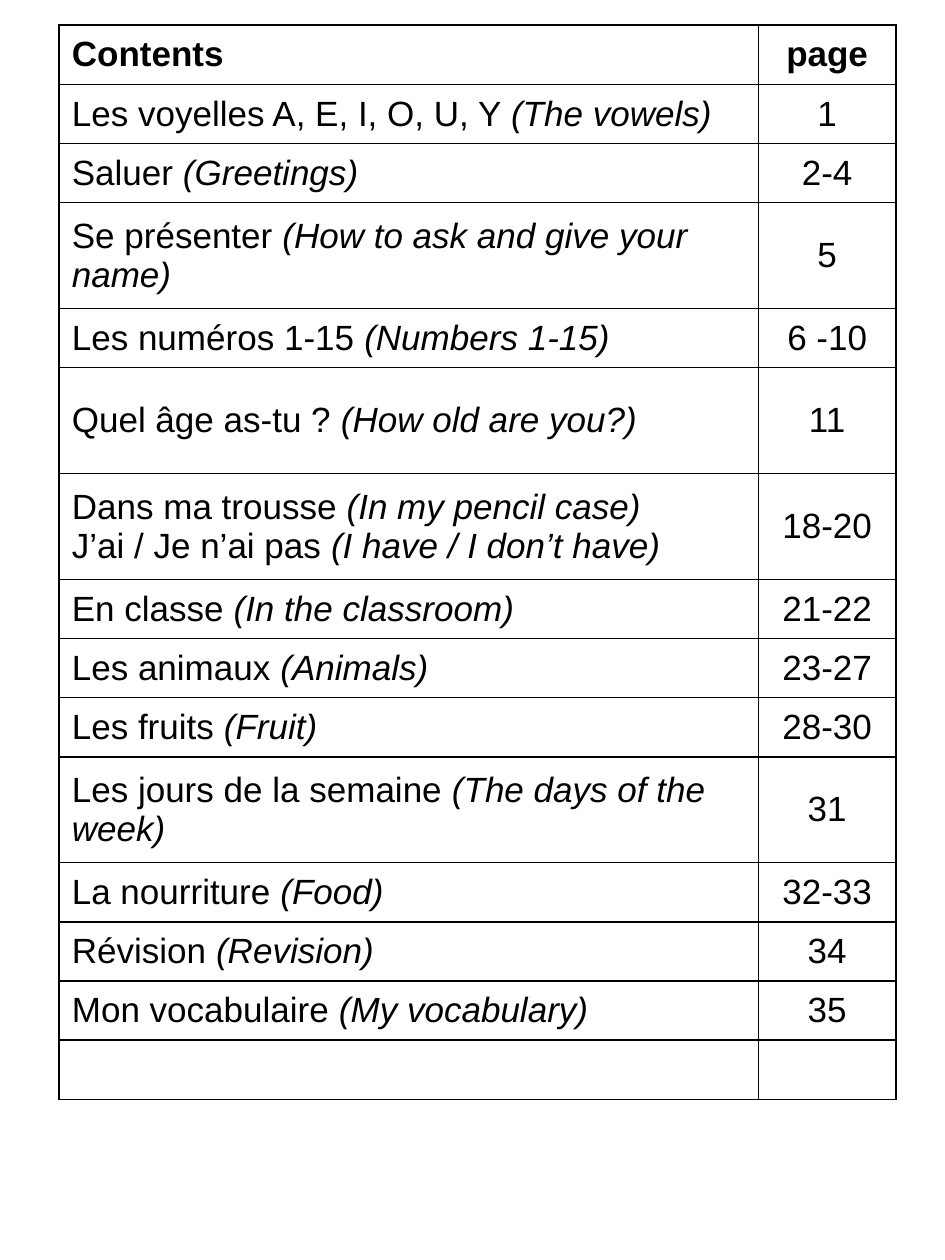
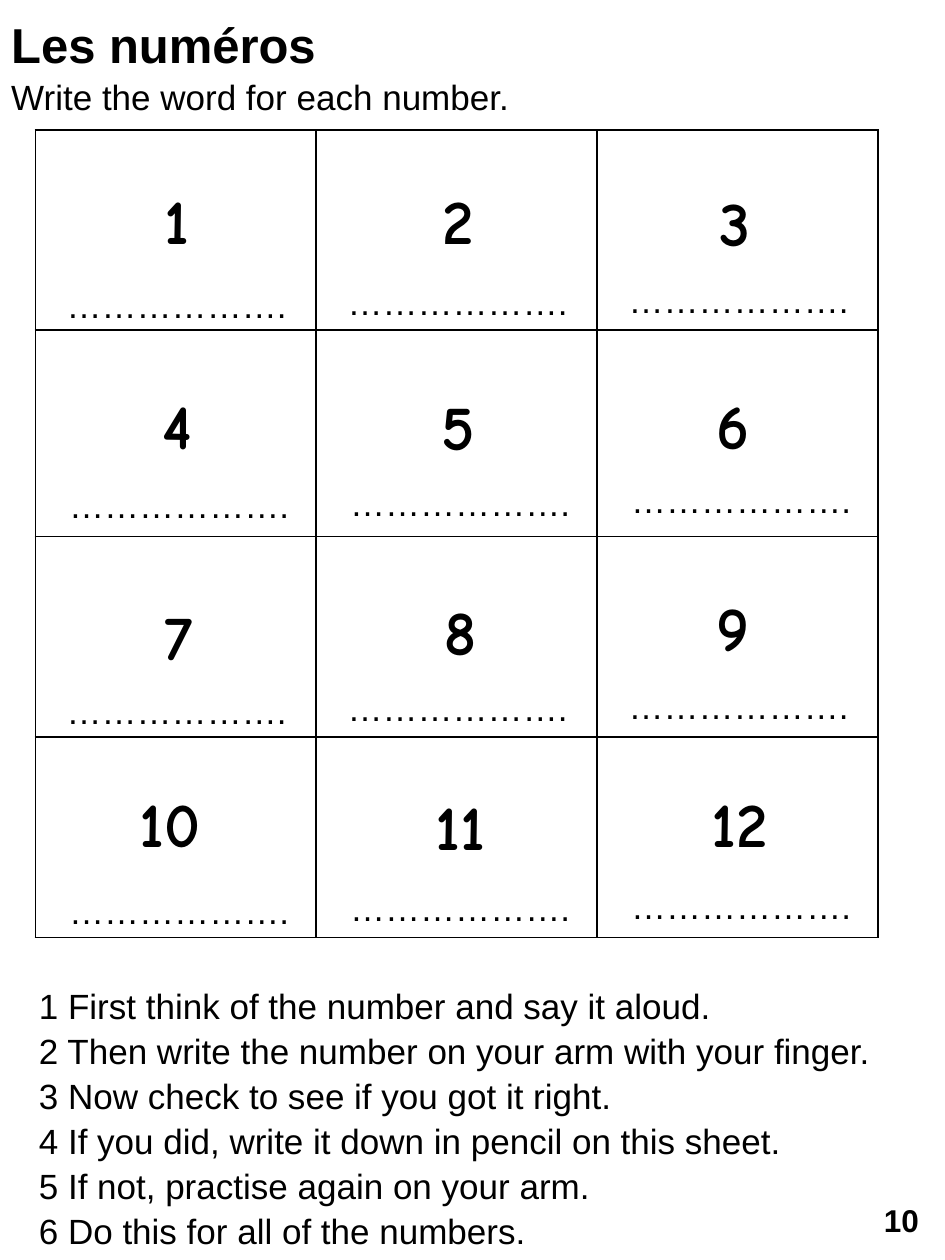
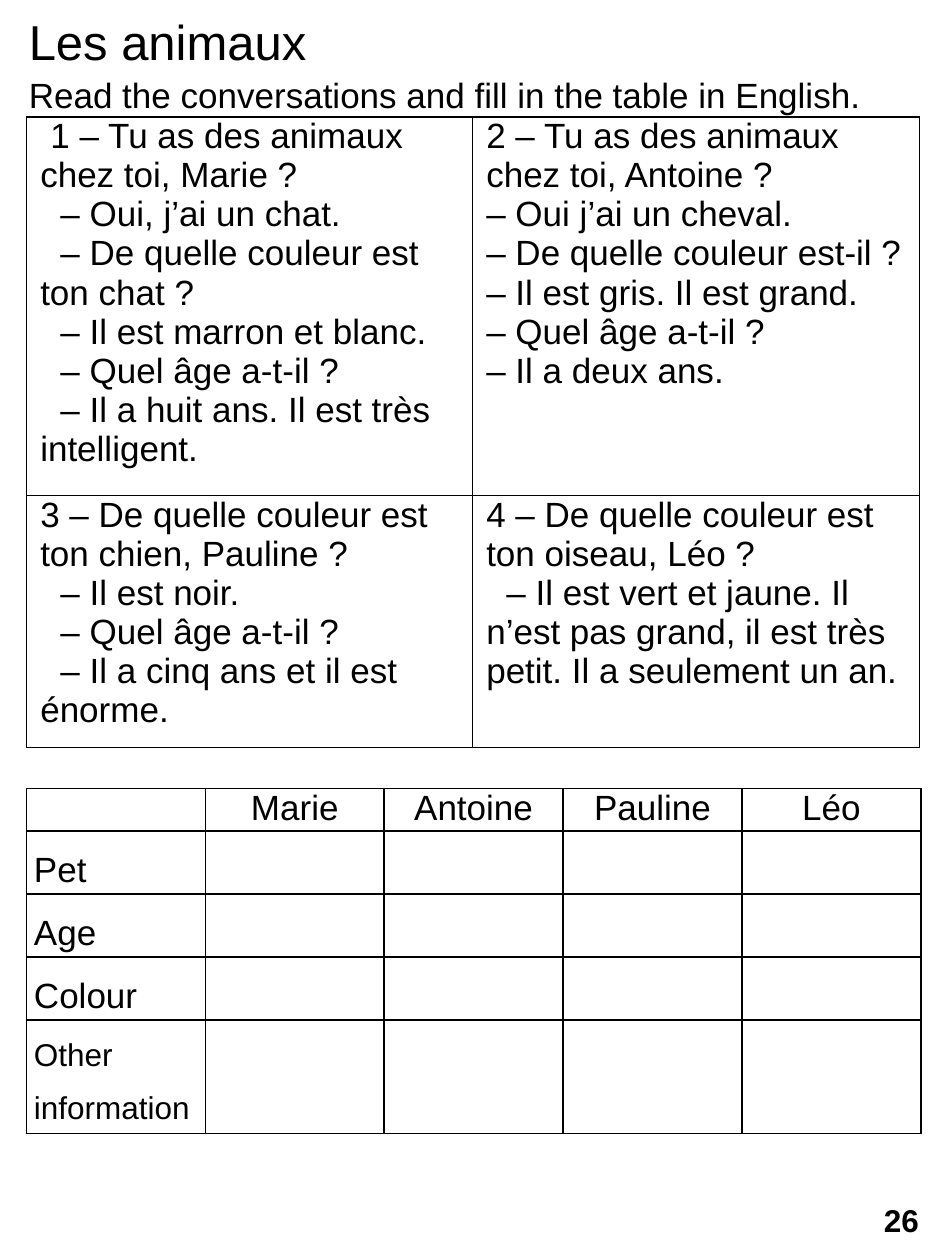
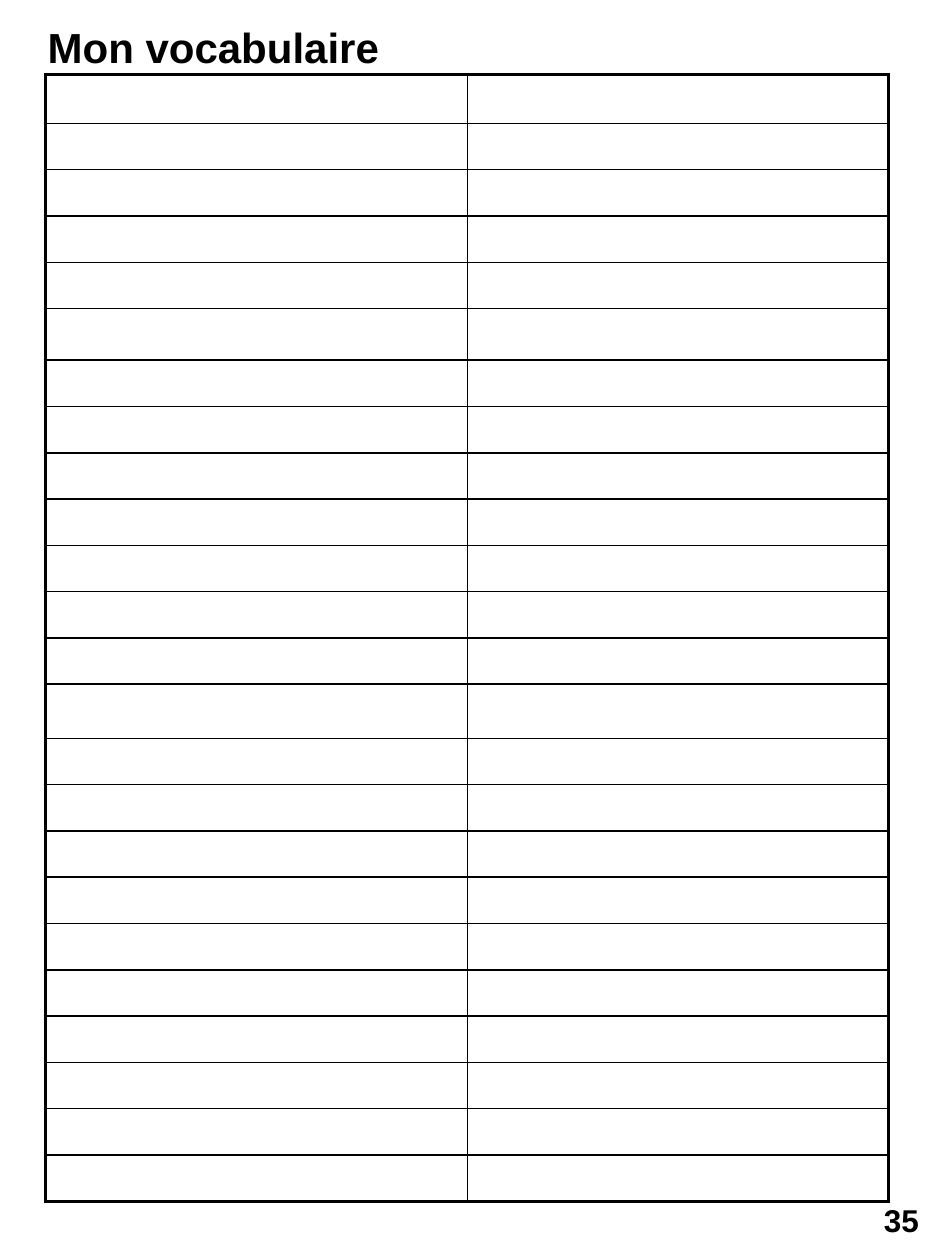
"""Build four pages of a French workbook: contents, numbers, animals and vocabulary."""
from dataclasses import dataclass, field
from typing import Any, NamedTuple

from lxml import etree
from pptx import Presentation
from pptx.dml.color import RGBColor
from pptx.enum.shapes import MSO_SHAPE
from pptx.enum.text import MSO_ANCHOR, PP_ALIGN
from pptx.oxml.ns import qn
from pptx.util import Inches, Pt

CENTER = PP_ALIGN.CENTER
TOP, MIDDLE = MSO_ANCHOR.TOP, MSO_ANCHOR.MIDDLE
ROUNDED = MSO_SHAPE.ROUNDED_RECTANGLE
COLORS = {"ink": "000000"}
BASE = {"name": "Arial", "size": Pt(20), "bold": False, "italic": False}
ITALIC = {"italic": True}
BOLD = {"bold": True}
HEADING = {"size": Pt(28)}
PAGE = {"size": Pt(18), "bold": True}
DIGIT = {"name": "Comic Neue", "size": Pt(36), "bold": True}
CENTERED = {"alignment": CENTER}
LOOSE = {"line_spacing": 1.07}
SPACED = {"line_spacing": 1.5}


class Run(NamedTuple):
    """A piece of text with its font values."""
    text: str
    font: dict[str, Any] = {}


@dataclass
class Para:
    """A paragraph with its format and indents in inches."""
    runs: list[Run]
    layout: dict[str, Any] = field(default_factory=dict)
    margin: float = 0
    indent: float = 0


class Box(NamedTuple):
    """A position and size in inches."""
    left: float
    top: float
    width: float
    height: float


@dataclass
class Grid:
    """A bordered table with its cell paragraphs."""
    left: float
    top: float
    cols: list[float]
    rows: list[float]
    cells: list[list[list[Para]]] = field(default_factory=list)
    inset: tuple[float, float] = (0, 0)
    anchor: Any = TOP
    outer: float = 1


def line(text: str, font: dict[str, Any] | None = None, **layout: Any) -> Para:
    """Return a paragraph of one run."""
    return Para([Run(text, font or {})], layout)


def write(tf: Any, paras: list[Para]) -> None:
    """Write paragraphs into a text frame."""
    for i, para in enumerate(paras):
        p = tf.add_paragraph() if i else tf.paragraphs[0]
        for name, value in para.layout.items():
            setattr(p, name, value)
        if para.margin:
            pPr = p._p.get_or_add_pPr()
            pPr.set("marL", str(Inches(para.margin)))
            pPr.set("indent", str(Inches(para.indent)))
        for run in para.runs:
            for j, text in enumerate(run.text.split("\n")):
                if j:
                    p.add_line_break()
                if not text:
                    continue
                r = p.add_run()
                r.text = text
                for name, value in (BASE | run.font).items():
                    setattr(r.font, name, value)
                r.font.color.rgb = RGBColor.from_string(COLORS["ink"])


def add_stroke(parent: Any, tag: str, width: float, index: int) -> None:
    """Insert a solid line element into a properties element."""
    ln = etree.Element(qn(tag), w=str(Pt(width)))
    fill = etree.SubElement(ln, qn("a:solidFill"))
    etree.SubElement(fill, qn("a:srgbClr"), val=COLORS["ink"])
    parent.insert(index, ln)


def add_text(slide: Any, box: Box, paras: list[Para], wrap: bool = True, anchor: Any = TOP) -> Any:
    """Add a text box and return its text frame."""
    tf = slide.shapes.add_textbox(*map(Inches, box)).text_frame
    tf.word_wrap = wrap
    tf.vertical_anchor = anchor
    write(tf, paras)
    return tf


def add_grid(slide: Any, grid: Grid) -> None:
    """Add a table with ruled borders."""
    n_rows, n_cols = len(grid.rows), len(grid.cols)
    box = Box(grid.left, grid.top, sum(grid.cols), sum(grid.rows))
    table = slide.shapes.add_table(n_rows, n_cols, *map(Inches, box)).table
    table.first_row = table.horz_banding = False
    for col, width in zip(table.columns, grid.cols):
        col.width = Inches(width)
    for row, height in zip(table.rows, grid.rows):
        row.height = Inches(height)
    for i in range(n_rows):
        for j in range(n_cols):
            cell = table.cell(i, j)
            cell.margin_left = cell.margin_right = Inches(grid.inset[0])
            cell.margin_top = cell.margin_bottom = Inches(grid.inset[1])
            cell.vertical_anchor = grid.anchor
            cell.fill.background()
            edges = {"L": j == 0, "R": j == n_cols - 1, "T": i == 0, "B": i == n_rows - 1}
            for k, (side, outside) in enumerate(edges.items()):
                add_stroke(cell._tc.get_or_add_tcPr(), f"a:ln{side}", grid.outer if outside else 1, k)
            if i < len(grid.cells) and j < len(grid.cells[i]):
                write(cell.text_frame, grid.cells[i][j])


def add_title(slide: Any, box: Box, title: str, task: str, font: dict[str, Any]) -> None:
    """Add a heading with the task under it."""
    add_text(slide, box, [Para([Run(f"{title}\n", HEADING | font), Run(task)], LOOSE)])


def add_page_number(slide: Any, number: int) -> None:
    """Add the page number in the lower right corner."""
    sp = slide.shapes.add_shape(ROUNDED, *map(Inches, Box(6.88, 9.45, 0.55, 0.47)))
    sp.shadow.inherit = False
    sp.fill.background()
    sp.line.fill.background()
    sp.text_frame.vertical_anchor = MIDDLE
    write(sp.text_frame, [line(str(number), PAGE, **CENTERED)])


CONTENTS = [
    ("Les voyelles A, E, I, O, U, Y ", "(The vowels)", "1"),
    ("Saluer ", "(Greetings)", "2-4"),
    ("Se présenter ", "(How to ask and give your name)", "5"),
    ("Les numéros 1-15 ", "(Numbers 1-15)", "6 -10"),
    ("Quel âge as-tu ? ", "(How old are you?)", "11"),
    ("Dans ma trousse ", "(In my pencil case) \n", "J’ai / Je n’ai pas ", "(I have / I don’t have)", "18-20"),
    ("En classe ", "(In the classroom)", "21-22"),
    ("Les animaux ", "(Animals)", "23-27"),
    ("Les fruits ", "(Fruit)", "28-30"),
    ("Les jours de la semaine ", "(The days of the week)", "31"),
    ("La nourriture ", "(Food)", "32-33"),
    ("Révision ", "(Revision)", "34"),
    ("Mon vocabulaire ", "(My vocabulary)", "35"),
]
TALL_ROWS = {3, 5, 6, 10}

DIGIT_BOXES = [
    (0.96, 1.3, 0.89), (3.19, 1.3, 0.89), (5.39, 1.32, 0.89),
    (0.96, 2.93, 0.89), (3.19, 2.94, 0.89), (5.37, 2.93, 0.89),
    (0.97, 4.6, 0.89), (3.21, 4.56, 0.89), (5.37, 4.53, 0.89),
    (0.76, 6.09, 1.18), (3.02, 6.11, 1.27), (5.26, 6.09, 1.22),
]
ANSWER_TOPS = [2.2, 3.79, 5.42, 7.01]
STEPS = """1 First think of the number and say it aloud.
2 Then write the number on your arm with your finger.
3 Now check to see if you got it right.
4 If you did, write it down in pencil on this sheet.
5 If not, practise again on your arm.
6 Do this for all of the numbers."""


class Dialogue(NamedTuple):
    """A conversation with the indents of its first and later lines."""
    first: float
    later: float
    lines: list[str]


DIALOGUES = [
    [
        Dialogue(0.08, 0.16, [
            "1 – Tu as des animaux chez toi, Marie ?",
            "– Oui, j’ai un chat.",
            "– De quelle couleur est ton chat ?",
            "– Il est marron et blanc.",
            "– Quel âge a-t-il ?",
            "– Il a huit ans. Il est très intelligent.",
        ]),
        Dialogue(0, 0, [
            "2 – Tu as des animaux chez toi, Antoine ?",
            "– Oui j’ai un cheval.",
            "– De quelle couleur est-il ? – Il est gris. Il est grand.",
            "– Quel âge a-t-il ?",
            "– Il a deux ans.",
        ]),
    ],
    [
        Dialogue(0, 0.16, [
            "3 – De quelle couleur est ton chien, Pauline ?",
            "– Il est noir.",
            "– Quel âge a-t-il ?",
            "– Il a cinq ans et il est énorme.",
        ]),
        Dialogue(0, 0.16, [
            "4 – De quelle couleur est ton oiseau, Léo ?",
            "– Il est vert et jaune. Il n’est pas grand, il est très petit. Il a seulement un an.",
        ]),
    ],
]
CHILDREN = ["Marie", "Antoine", "Pauline", "Léo"]
QUESTIONS = ["Pet", "Age", "Colour"]


def build_contents(slide: Any) -> None:
    """Draw the table of contents."""
    cells = [[[line("Contents", BOLD)], [line("page", BOLD, **CENTERED)]]]
    for *parts, page in CONTENTS:
        runs = [Run(text, ITALIC if i % 2 else {}) for i, text in enumerate(parts)]
        cells.append([[Para(runs)], [line(page, **CENTERED)]])
    rows = [0.84 if i in TALL_ROWS else 0.47 for i in range(len(cells) + 1)]
    add_grid(slide, Grid(0.47, 0.2, [5.55, 1.09], rows, cells, (0.1, 0.05), MIDDLE))


def build_numbers(slide: Any) -> None:
    """Draw the number writing sheet."""
    add_grid(slide, Grid(0.28, 1.03, [2.23] * 3, [1.59, 1.64, 1.59, 1.59]))
    for number, (left, top, width) in enumerate(DIGIT_BOXES, 1):
        digit = line(str(number), DIGIT, line_spacing=1.15, **CENTERED)
        tf = add_text(slide, Box(left, top, width, 0.85), [digit])
        add_stroke(tf.paragraphs[0].runs[0].font._element, "a:ln", 0.5, 0)
    add_title(slide, Box(-0.01, 0.03, 7.42, 0.91), "Les numéros", "Write the word for each number.", BOLD)
    for i, top in enumerate(ANSWER_TOPS):
        for j in range(3):
            box = Box(0.43 + 2.23 * j + 0.02 * (i % 2), top - 0.02 * j, 1.98, 0.44)
            add_text(slide, box, [line("……………….")])
    add_text(slide, Box(0.21, 7.74, 7.01, 2.12), [line(STEPS, **LOOSE)])
    add_page_number(slide, 10)


def build_animals(slide: Any) -> None:
    """Draw the conversations and the answer table."""
    cells = [
        [[Para([Run(text)], margin=0.04, indent=d.later if i else d.first) for i, text in enumerate(d.lines)]
         for d in row]
        for row in DIALOGUES
    ]
    add_grid(slide, Grid(0.21, 0.93, [3.54, 3.55], [3, 2], cells, (0.07, 0)))
    answers = [[[]] + [[line(name, **CENTERED)] for name in CHILDREN]]
    answers += [[[line(text, **SPACED)]] for text in QUESTIONS]
    answers.append([[line("Other information", {"size": Pt(18)}, **SPACED)]])
    add_grid(slide, Grid(0.21, 6.26, [1.42] * 5, [0.33, 0.5, 0.5, 0.5, 0.9], answers, (0.06, 0)))
    task = "Read the conversations and fill in the table in English."
    add_title(slide, Box(0.13, 0.01, 7.22, 0.91), "Les animaux ", task, {})
    add_page_number(slide, 26)


def build_vocabulary(slide: Any) -> None:
    """Draw the blank vocabulary list."""
    special = {0: 0.39, 5: 0.41, 13: 0.43}
    usual = (8.95 - sum(special.values())) / 21
    rows = [special.get(i, usual) for i in range(24)]
    add_grid(slide, Grid(0.36, 0.59, [3.35, 3.34], rows, outer=2.25))
    title = line("Mon vocabulaire", {"size": Pt(24), "bold": True})
    add_text(slide, Box(0.28, 0.12, 2.86, 0.5), [title], False, MIDDLE)
    add_page_number(slide, 35)


def main() -> None:
    """Build and save the workbook pages."""
    prs = Presentation()
    prs.slide_width, prs.slide_height = Inches(7.5), Inches(10)
    for build in (build_contents, build_numbers, build_animals, build_vocabulary):
        build(prs.slides.add_slide(prs.slide_layouts[6]))
    prs.save("out.pptx")


if __name__ == "__main__":
    main()
